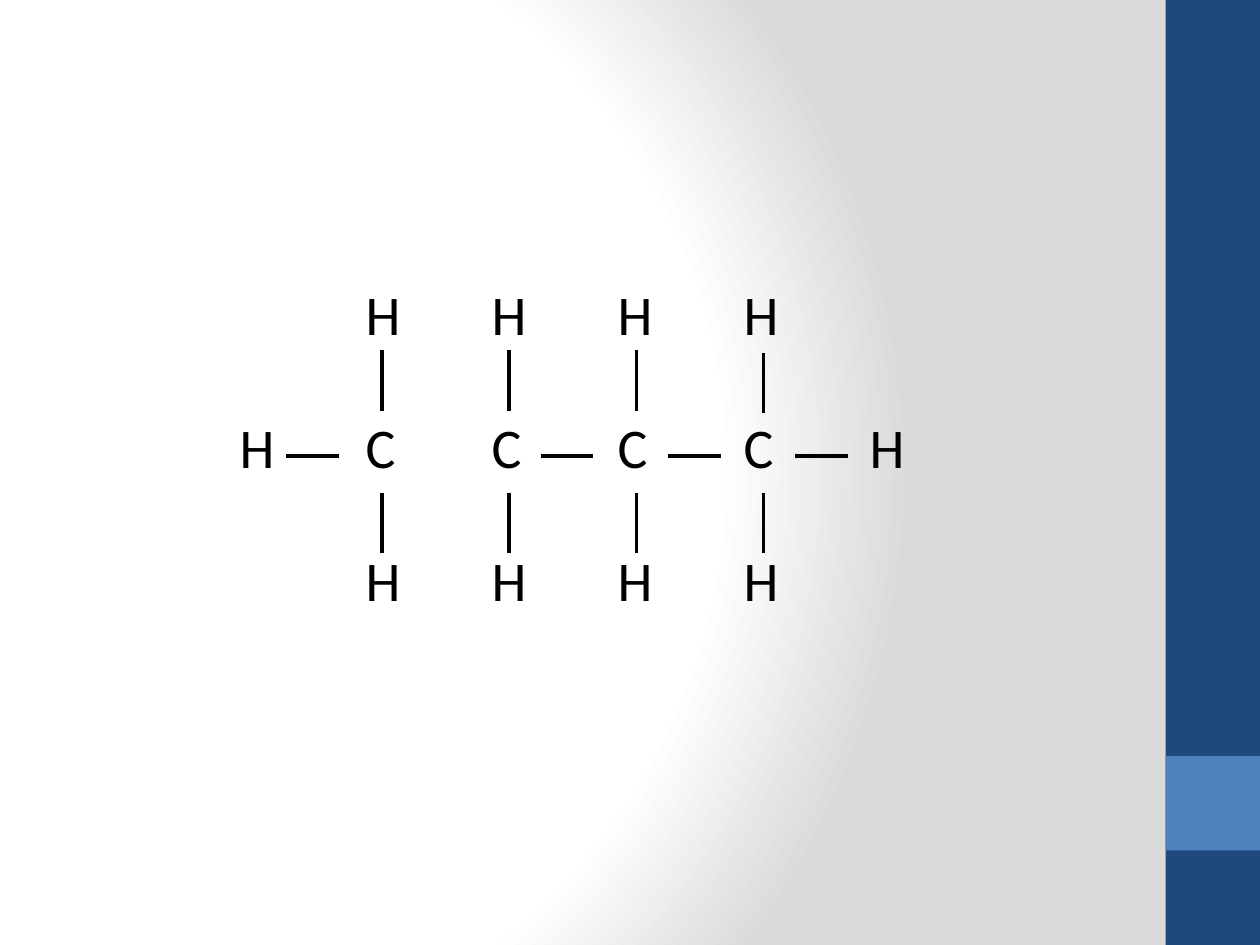
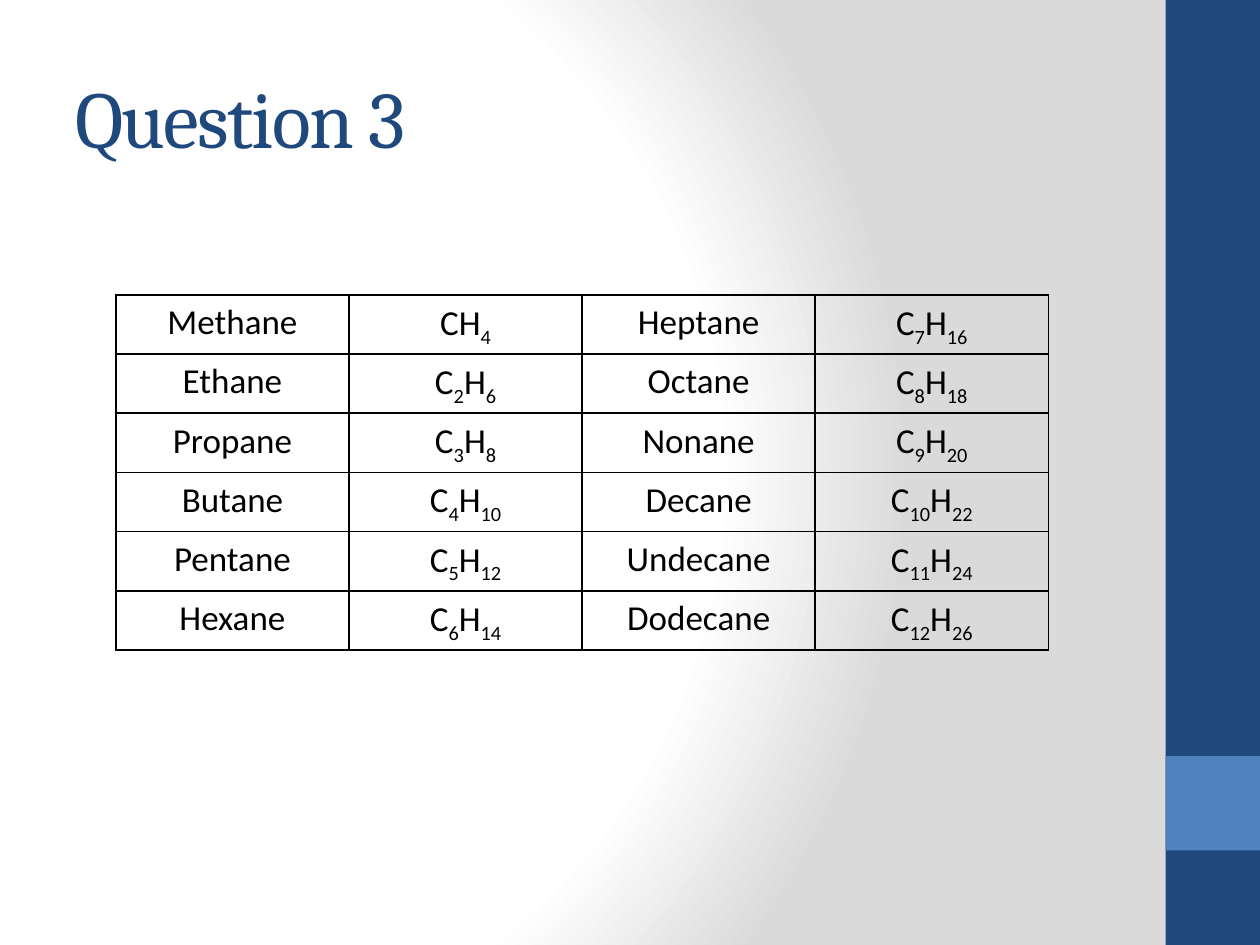
"""Build two slides on alkanes: a structural formula and a table of formulas."""
from lxml import etree
from pptx import Presentation
from pptx.dml.color import RGBColor
from pptx.enum.shapes import MSO_CONNECTOR, MSO_SHAPE
from pptx.enum.text import MSO_ANCHOR, PP_ALIGN
from pptx.oxml import parse_xml
from pptx.oxml.ns import nsdecls, qn
from pptx.util import Inches, Pt

STRAIGHT = MSO_CONNECTOR.STRAIGHT
RECTANGLE = MSO_SHAPE.RECTANGLE
MIDDLE = MSO_ANCHOR.MIDDLE
LEFT, CENTER = PP_ALIGN.LEFT, PP_ALIGN.CENTER

NAVY, BLUE, BLACK = "1F497D", "4F81BD", "000000"
GRADIENT_STOPS = ((0, "FFFFFF"), (75, "FFFFFF"), (100, "DADADA"))
BODY_FONT, TITLE_FONT = "Calibri", "Cambria"
ALKANES = (
    "Methane", "Ethane", "Propane", "Butane", "Pentane", "Hexane",
    "Heptane", "Octane", "Nonane", "Decane", "Undecane", "Dodecane",
)


def color(hex_string):
    """Return the colour for a hex string."""
    return RGBColor.from_string(hex_string)


class SlideBuilder:
    """Hold the shared style and the current slide."""

    def __init__(self, presentation):
        """Keep the presentation to add slides to."""
        self.presentation = presentation
        self.slide = None

    def new_slide(self):
        """Add a blank slide with the gradient and the side band."""
        self.slide = self.presentation.slides.add_slide(self.presentation.slide_layouts[6])
        self.background()
        self.rectangle(9.25, 0, 0.75, 7.5, NAVY)
        self.rectangle(9.25, 6, 0.75, 0.75, BLUE)

    def background(self):
        """Fill the slide with a round gradient."""
        stops = "".join(
            f'<a:gs pos="{position * 1000}"><a:srgbClr val="{shade}"/></a:gs>'
            for position, shade in GRADIENT_STOPS
        )
        background = parse_xml(
            f'<p:bg {nsdecls("p", "a")}><p:bgPr><a:gradFill rotWithShape="1">'
            f'<a:gsLst>{stops}</a:gsLst><a:path path="circle">'
            '<a:fillToRect l="20000" t="50000" r="100000" b="50000"/></a:path>'
            "</a:gradFill><a:effectLst/></p:bgPr></p:bg>"
        )
        self.slide.element.find(qn("p:cSld")).insert(0, background)

    def rectangle(self, left, top, width, height, fill):
        """Add a plain filled rectangle."""
        shape = self.slide.shapes.add_shape(
            RECTANGLE, Inches(left), Inches(top), Inches(width), Inches(height))
        shape.shadow.inherit = False
        shape.fill.solid()
        shape.fill.fore_color.rgb = color(fill)
        shape.line.fill.background()

    def text_box(self, left, top, width, height):
        """Add a wrapping text box and return its text frame."""
        shape = self.slide.shapes.add_textbox(
            Inches(left), Inches(top), Inches(width), Inches(height))
        shape.text_frame.word_wrap = True
        return shape.text_frame

    def style(self, paragraph, size, alignment=CENTER, font=BODY_FONT, shade=BLACK):
        """Set the font and alignment of a paragraph."""
        paragraph.alignment = alignment
        paragraph.font.size = Pt(size)
        paragraph.font.name = font
        paragraph.font.color.rgb = color(shade)

    def title(self, text):
        """Add the slide title."""
        frame = self.text_box(0.5, 0.3, 8.33, 1.25)
        frame.vertical_anchor = MIDDLE
        paragraph = frame.paragraphs[0]
        run = paragraph.add_run()
        run.text = text
        run.font.size = Pt(46)
        run.font._element.set("spc", "-100")
        self.style(paragraph, 46, LEFT, TITLE_FONT, NAVY)

    def atoms(self, rows, top, gap):
        """Add centred rows of atoms spaced by one-inch tabs."""
        frame = self.text_box(0, top, 9.08, 2.9)
        frame.margin_top = frame.margin_bottom = 0
        for index, row in enumerate(rows):
            paragraph = frame.paragraphs[0] if index == 0 else frame.add_paragraph()
            paragraph.add_run().text = "\t".join(row)
            self.style(paragraph, 32)
            paragraph.space_after = Pt(gap)
            tabs = etree.Element(qn("a:tabLst"))
            for stop in range(1, len(row)):
                etree.SubElement(tabs, qn("a:tab"), pos=str(Inches(stop)), algn="l")
            properties = paragraph._p.get_or_add_pPr()
            properties.find(qn("a:spcAft")).addnext(tabs)

    def bond(self, left, top, width=0, height=0):
        """Add a straight bond."""
        connector = self.slide.shapes.add_connector(
            STRAIGHT, Inches(left), Inches(top), Inches(left + width), Inches(top + height))
        connector.line.color.rgb = color(BLACK)
        connector.line.width = Pt(2)
        etree.SubElement(connector._element.spPr, qn("a:effectLst"))

    def table(self, rows, left, top, column_width, row_height):
        """Add a bordered table whose cells are lists of (text, is_subscript)."""
        columns = len(rows[0])
        table = self.slide.shapes.add_table(
            len(rows), columns, Inches(left), Inches(top),
            Inches(column_width * columns), Inches(row_height * len(rows))).table
        table.first_row = table.horz_banding = False
        for column in table.columns:
            column.width = Inches(column_width)
        for row_index, row in enumerate(rows):
            table.rows[row_index].height = Inches(row_height)
            for column_index, parts in enumerate(row):
                self.cell(table.cell(row_index, column_index), parts)

    def cell(self, cell, parts):
        """Write and border one table cell."""
        cell.margin_left = cell.margin_right = Inches(0.07)
        cell.margin_top = cell.margin_bottom = 0
        paragraph = cell.text_frame.paragraphs[0]
        self.style(paragraph, 20)
        paragraph.line_spacing = 1.15
        for text, is_subscript in parts:
            run = paragraph.add_run()
            run.text = text
            if is_subscript:
                run.font._element.set("baseline", "-25000")
        cell.fill.background()
        for index, side in enumerate(("lnL", "lnR", "lnT", "lnB")):
            border = parse_xml(
                f'<a:{side} {nsdecls("a")} w="{Pt(1)}"><a:solidFill>'
                f'<a:srgbClr val="{BLACK}"/></a:solidFill></a:{side}>')
            cell._tc.get_or_add_tcPr().insert(index, border)


def alkane_cells(carbons):
    """Return the name and formula cells for a number of carbon atoms."""
    formula = [("C", False), (str(carbons), True), ("H", False), (str(2 * carbons + 2), True)]
    if carbons == 1:
        formula = [("CH", False), ("4", True)]
    return [[(ALKANES[carbons - 1], False)], formula]


def structure_slide(builder):
    """Draw the structural formula with one carbon bond left open."""
    builder.new_slide()
    builder.atoms(("HHHH", "HCCCCH", "HHHH"), top=2.22, gap=37.6)
    for carbon in range(4):
        bond_left = 3.03 + 1.01 * carbon
        builder.bond(bond_left, 2.8 if carbon == 3 else 2.78, height=0.48)
        builder.bond(bond_left, 3.91, height=0.48)
    for position in (0, 2, 3, 4):
        builder.bond(2.27 + 1.01 * position, 3.62, width=0.42)


def question_slide(builder):
    """Lay out the table of alkane names and formulas."""
    builder.new_slide()
    builder.title("Question 3")
    half = len(ALKANES) // 2
    rows = [alkane_cells(n) + alkane_cells(n + half) for n in range(1, half + 1)]
    builder.table(rows, left=0.92, top=2.34, column_width=1.85, row_height=0.47)


def main():
    """Build and save the presentation."""
    presentation = Presentation()
    presentation.slide_width = Inches(10)
    presentation.slide_height = Inches(7.5)
    builder = SlideBuilder(presentation)
    structure_slide(builder)
    question_slide(builder)
    presentation.save("out.pptx")


if __name__ == "__main__":
    main()
